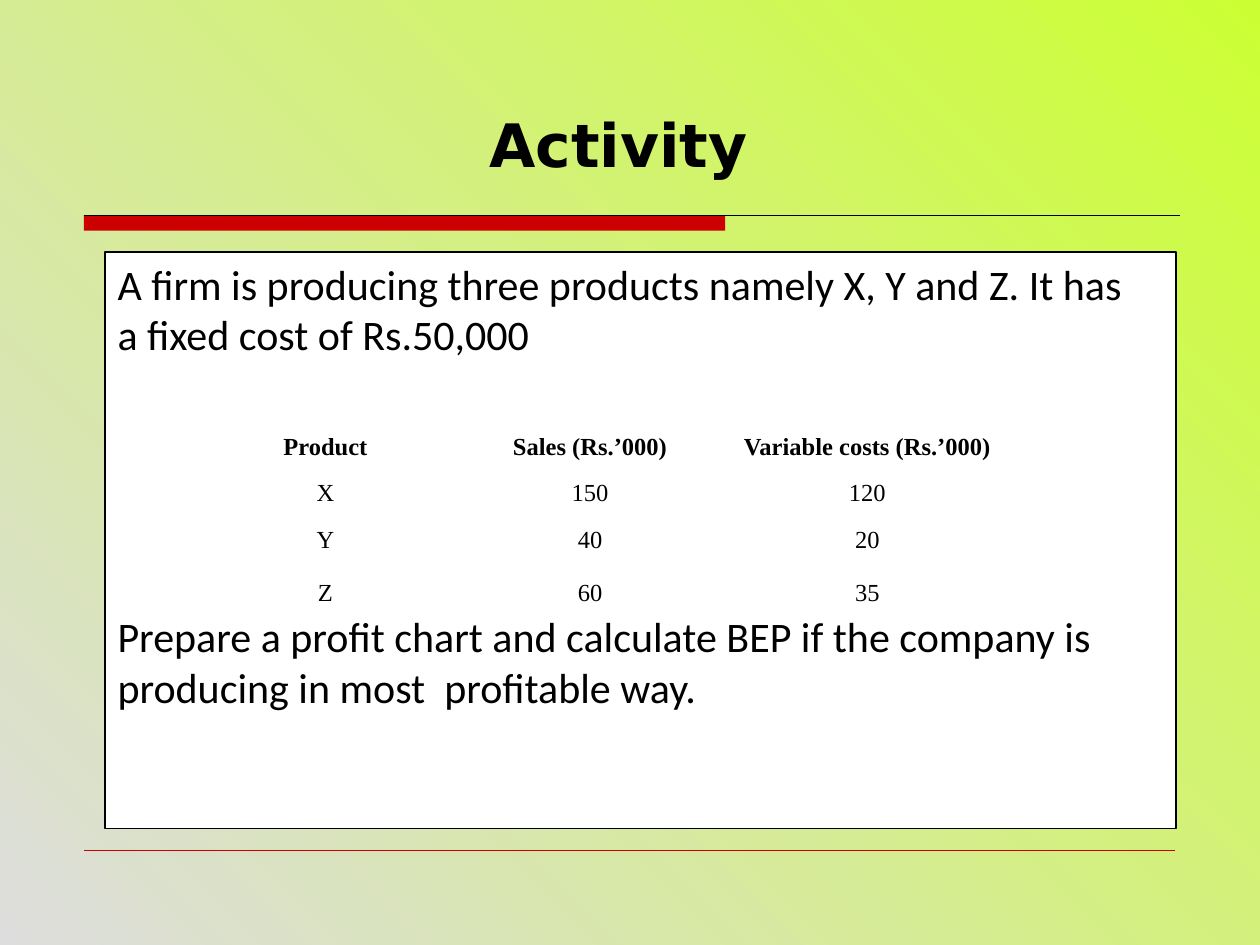
from dataclasses import dataclass

from lxml import etree
from pptx import Presentation
from pptx.dml.color import RGBColor
from pptx.enum.shapes import MSO_CONNECTOR, MSO_SHAPE
from pptx.enum.text import MSO_ANCHOR, PP_ALIGN
from pptx.oxml.ns import qn
from pptx.util import Cm, Pt

RECTANGLE = MSO_SHAPE.RECTANGLE
STRAIGHT = MSO_CONNECTOR.STRAIGHT
TOP, BOTTOM = MSO_ANCHOR.TOP, MSO_ANCHOR.BOTTOM
CENTER, JUSTIFY = PP_ALIGN.CENTER, PP_ALIGN.JUSTIFY

COLORS = {
    "grey": "DDDDDD",
    "lime": "CCFF33",
    "red": "CC0000",
    "black": "000000",
    "white": "FFFFFF",
}
STATEMENT = [
    "A firm is producing three products namely X, Y and Z. It has ",
    "a fixed cost of Rs.50,000",
]
TASK = [
    "Prepare a profit chart and calculate BEP if the company is ",
    "producing in most  profitable way.",
]
PRODUCTS = [
    ("Product", "Sales (Rs.’000)", "Variable costs (Rs.’000)"),
    ("X", "150", "120"),
    ("Y", "40", "20"),
    ("Z", "60", "35"),
]
COLUMN_WIDTHS = [5.08, 5.59, 5.59]
ROW_HEIGHTS = [0.94, 0.94, 1.07, 1.07]


@dataclass
class Box:
    """Hold a region of the slide in centimetres."""

    left: float
    top: float
    width: float
    height: float

    def lengths(self):
        """Return the four measures as slide lengths."""
        return Cm(self.left), Cm(self.top), Cm(self.width), Cm(self.height)


def color(name):
    """Return the named palette colour."""
    return RGBColor.from_string(COLORS[name])


def add_run(paragraph, text, font, size, bold=False):
    """Add one black run to a paragraph."""
    run = paragraph.add_run()
    run.text = text
    run.font.name = font
    run.font.size = Pt(size)
    run.font.bold = bold
    run.font.color.rgb = color("black")


def add_rule(slide, left, top, width, line_color, weight):
    """Draw a horizontal rule without a shadow."""
    rule = slide.shapes.add_connector(
        STRAIGHT, Cm(left), Cm(top), Cm(left + width), Cm(top)
    )
    rule.line.color.rgb = color(line_color)
    rule.line.width = Pt(weight)
    etree.SubElement(rule.element.spPr, qn("a:effectLst"))


def add_rectangle(slide, box, fill_color):
    """Draw a filled rectangle without a shadow."""
    rectangle = slide.shapes.add_shape(RECTANGLE, *box.lengths())
    rectangle.shadow.inherit = False
    rectangle.fill.solid()
    rectangle.fill.fore_color.rgb = color(fill_color)
    return rectangle


def paint_background(slide):
    """Fill the slide with a diagonal gradient."""
    fill = slide.background.fill
    fill.gradient()
    fill.gradient_angle = 45
    for stop, name in zip(fill.gradient_stops, ("grey", "lime")):
        stop.color.rgb = color(name)


def add_frame(slide, box):
    """Draw the bar and rules above and below the content."""
    bar = add_rectangle(slide, Box(box.left, box.top, 12.93, 0.31), "red")
    bar.line.fill.background()
    add_rule(slide, box.left, box.top, box.width, "black", 0.75)
    add_rule(slide, box.left, box.top + box.height, box.width - 0.1, "red", 0.25)


def add_title(slide, box):
    """Place the slide heading."""
    frame = slide.shapes.add_textbox(*box.lengths()).text_frame
    frame.word_wrap = True
    frame.vertical_anchor = BOTTOM
    frame.margin_bottom = Cm(1.52)
    frame.margin_right = Cm(0.71)
    paragraph = frame.paragraphs[0]
    paragraph.alignment = CENTER
    add_run(paragraph, "Activity", "DejaVu Sans", 34.2, True)


def add_exercise(slide, box):
    """Place the panel with the exercise text and its table."""
    panel = add_rectangle(slide, box, "white")
    panel.line.color.rgb = color("black")
    panel.line.width = Pt(0.75)
    frame = panel.text_frame
    frame.word_wrap = True
    frame.vertical_anchor = TOP
    for index, text in enumerate(STATEMENT + TASK):
        paragraph = frame.add_paragraph() if index else frame.paragraphs[0]
        paragraph.alignment = JUSTIFY
        if index == len(STATEMENT):
            paragraph.space_before = Pt(144)
        add_run(paragraph, text, "Calibri", 24)
    add_products(
        slide,
        Box(box.left + 1.9, box.top + 3.38, sum(COLUMN_WIDTHS), sum(ROW_HEIGHTS)),
    )


def add_products(slide, box):
    """Place the table of sales and variable costs."""
    table = slide.shapes.add_table(
        len(ROW_HEIGHTS), len(COLUMN_WIDTHS), *box.lengths()
    ).table
    table.first_row = False
    table.horz_banding = False
    for column, width in zip(table.columns, COLUMN_WIDTHS):
        column.width = Cm(width)
    for row_index, (row, height) in enumerate(zip(table.rows, ROW_HEIGHTS)):
        row.height = Cm(height)
        for cell, text in zip(row.cells, PRODUCTS[row_index]):
            cell.fill.solid()
            cell.fill.fore_color.rgb = color("white")
            cell.margin_left = cell.margin_right = Cm(0.18)
            cell.margin_top = cell.margin_bottom = 0
            paragraph = cell.text_frame.paragraphs[0]
            paragraph.alignment = CENTER
            paragraph.line_spacing = 1.5
            add_run(paragraph, text, "Times New Roman", 14, row_index == 0)


def main():
    """Build and save the activity slide."""
    presentation = Presentation()
    presentation.slide_width = Cm(25.4)
    presentation.slide_height = Cm(19.05)
    slide = presentation.slides.add_slide(presentation.slide_layouts[6])
    paint_background(slide)
    add_frame(slide, Box(1.69, 4.34, 22.1, 12.8))
    add_title(slide, Box(1.27, 1.47, 22.86, 3.66))
    add_exercise(slide, Box(2.12, 5.08, 21.59, 11.63))
    presentation.save("out.pptx")


if __name__ == "__main__":
    main()
